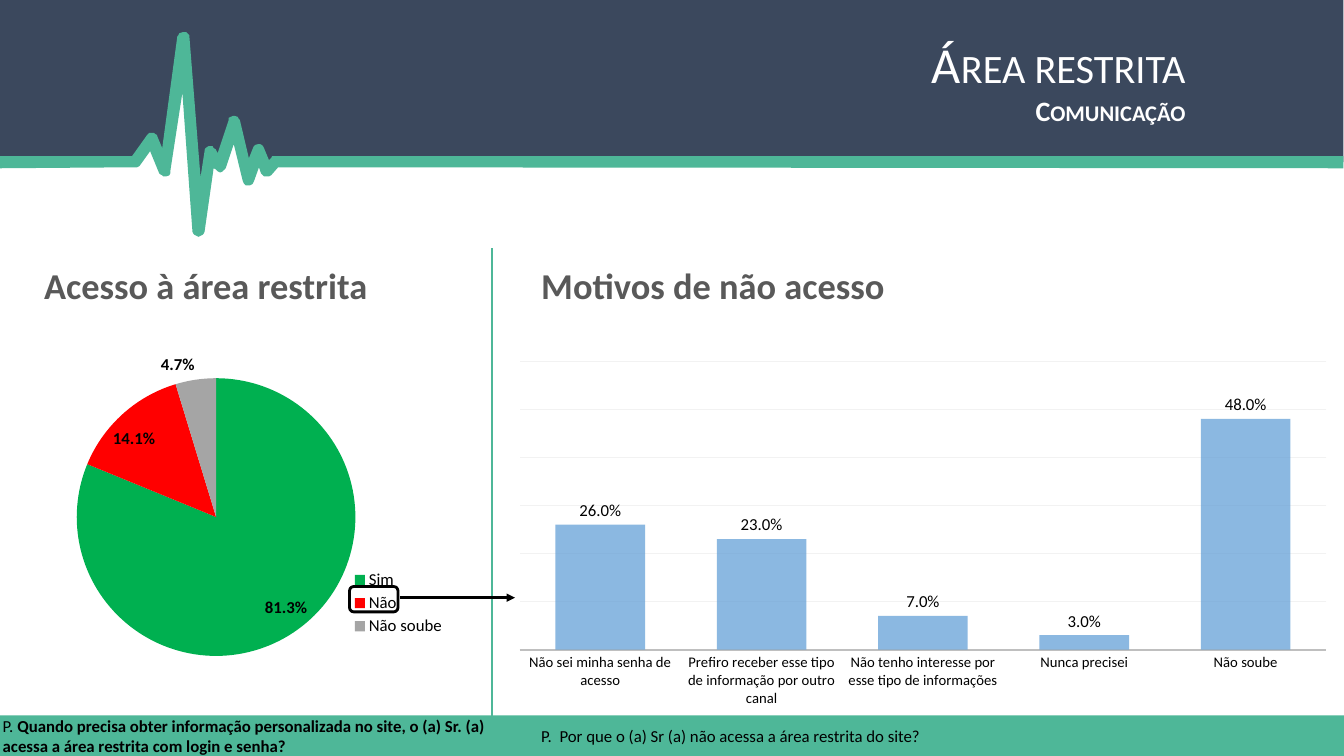
"""Build the survey slide about access to the restricted area."""
from dataclasses import dataclass

from pptx import Presentation
from pptx.chart.data import CategoryChartData
from pptx.dml.color import RGBColor
from pptx.enum import chart as ch, shapes, text
from pptx.oxml import ns, xmlchemy as xc
from pptx.util import Cm, Pt


@dataclass(frozen=True)
class Theme:
    """Colours, font and type sizes of the slide."""
    font: str = "Calibri"
    navy: str = "3B485D"
    green: str = "4EB798"
    white: str = "FFFFFF"
    black: str = "000000"
    grey: str = "595959"
    axis: str = "BFBFBF"
    grid: str = "F2F2F2"
    bar: str = "5B9BD5"
    slices: tuple = ("00B050", "FF0000", "A5A5A5")
    title: float = 36
    subtitle: float = 20
    heading: float = 26
    body: float = 12
    category: float = 10.5


T = Theme()
UNIT = Cm(0.0254)

BAND = [(1333, 0), (0, 0), (0, 161), (134, 160), (152, 141), (162, 167), (181, 74),
        (197, 204), (208, 155), (218, 165), (231, 126), (246, 176), (258, 153),
        (265, 169), (275, 160), (1333, 161)]

PULSE = [(1333, 155), (273, 155), (270, 155), (269, 157), (267, 159), (262, 147),
         (261, 145), (260, 144), (258, 143), (256, 143), (253, 144), (252, 145),
         (251, 147), (247, 157), (238, 119), (237, 118), (236, 116), (233, 115),
         (231, 115), (229, 116), (227, 117), (227, 119), (216, 152), (214, 148),
         (212, 147), (211, 145), (209, 145), (207, 145), (204, 147), (203, 149),
         (203, 150), (199, 176), (188, 37), (188, 35), (186, 33), (185, 32),
         (183, 32), (181, 32), (178, 33), (177, 35), (176, 36), (161, 147),
         (156, 135), (156, 134), (154, 133), (153, 132), (151, 132), (148, 132),
         (147, 133), (146, 134), (131, 155), (0, 155), (0, 167), (134, 166),
         (136, 166), (138, 165), (139, 164), (149, 150), (158, 172), (159, 173),
         (161, 174), (162, 175), (165, 175), (168, 174), (169, 172), (169, 170),
         (181, 92), (191, 230), (192, 232), (193, 233), (195, 234), (197, 235),
         (199, 234), (201, 233), (202, 232), (203, 230), (212, 167), (214, 168),
         (216, 170), (218, 171), (219, 171), (221, 170), (222, 169), (223, 168),
         (224, 167), (232, 143), (241, 180), (242, 182), (243, 183), (244, 184),
         (246, 184), (248, 184), (250, 183), (251, 182), (252, 180), (257, 166),
         (259, 172), (260, 173), (261, 174), (262, 175), (264, 175), (267, 175),
         (269, 174), (276, 166), (1333, 167)]


def rgb(color):
    """Turn a hex string into a colour."""
    return RGBColor.from_string(color)


def style(font, size, color=T.black, bold=False):
    """Set the font, size, colour and weight."""
    font.name, font.size, font.bold = T.font, Pt(size), bold
    font.color.rgb = rgb(color)


def paint(sp, color):
    """Fill a shape and take away its outline and shadow."""
    sp.fill.solid()
    sp.fill.fore_color.rgb = rgb(color)
    sp.line.fill.background()
    sp.shadow.inherit = False


def add_outline(s, points, color):
    """Draw a closed filled outline."""
    builder = s.shapes.build_freeform(*points[0], scale=UNIT)
    builder.add_line_segments(points[1:], close=True)
    paint(builder.convert_to_shape(), color)


def add_text(s, box, runs, size, color=T.black):
    """Add a one-paragraph text box of (text, bold) runs."""
    tf = s.shapes.add_textbox(*map(Cm, box)).text_frame
    tf.word_wrap = True
    for content, bold in runs:
        r = tf.paragraphs[0].add_run()
        r.text = content
        style(r.font, size, color, bold)


def add_line(s, start, end, color, width, arrow=False):
    """Draw a straight line, with an arrowhead if asked."""
    line = s.shapes.add_connector(shapes.MSO_CONNECTOR.STRAIGHT, *map(Cm, start + end))
    line.line.color.rgb = rgb(color)
    line.line.width = Pt(width)
    if arrow:
        line.line._get_or_add_ln().append(xc.OxmlElement("a:tailEnd"))
        line.line._get_or_add_ln()[-1].set("type", "triangle")
    line.element.spPr.append(xc.OxmlElement("a:effectLst"))


def place(node, index, x, y, w, h, inner=False):
    """Give a plot area or legend a manual layout in chart fractions."""
    old = node.find(ns.qn("c:layout"))
    if old is not None:
        node.remove(old)
    layout, manual = xc.OxmlElement("c:layout"), xc.OxmlElement("c:manualLayout")
    layout.append(manual)
    values = {"layoutTarget": "inner"} if inner else {}
    values |= {"xMode": "edge", "yMode": "edge", "x": x, "y": y, "w": w, "h": h}
    for tag, value in values.items():
        item = xc.OxmlElement(f"c:{tag}")
        item.set("val", str(value))
        manual.append(item)
    node.insert(index, layout)


def add_chart(s, kind, box, values, plot_box, label_pos, bold=False):
    """Add a one-series percentage chart with value labels."""
    data = CategoryChartData(number_format="0.0%")
    data.categories = list(values)
    data.add_series("Series 1", list(values.values()))
    chart = s.shapes.add_chart(kind, *map(Cm, box), data).chart
    chart.has_title = chart.has_legend = False
    style(chart.font, 10)
    place(chart._chartSpace.chart.plotArea, 0, *plot_box, inner=True)
    plot = chart.plots[0]
    plot.has_data_labels = True
    labels = plot.data_labels
    labels.show_value, labels.position = True, label_pos
    labels.number_format, labels.number_format_is_linked = "0.0%", False
    style(labels.font, T.body, bold=bold)
    return chart


def add_access_pie(s):
    """Add the pie of access to the restricted area."""
    values = {"Sim": 0.813, "Não": 0.141, "Não soube": 0.047}
    chart = add_chart(s, ch.XL_CHART_TYPE.PIE, (-0.33, 8.92, 13.92, 8.36), values,
                      (0.11, 0.07, 0.61, 0.84), ch.XL_LABEL_POSITION.BEST_FIT, True)
    for i, color in enumerate(T.slices):
        fill = chart.plots[0].series[0].points[i].format.fill
        fill.solid()
        fill.fore_color.rgb = rgb(color)
    chart.has_legend = True
    chart.legend.position = ch.XL_LEGEND_POSITION.RIGHT
    chart.legend.include_in_layout = False
    style(chart.legend.font, T.body)
    place(chart.legend._element, 1, 0.64, 0.64, 0.21, 0.22)


def add_reasons_columns(s):
    """Add the columns of reasons for not accessing."""
    values = {"Não sei minha senha de acesso": 0.26,
              "Prefiro receber esse tipo de informação por outro canal": 0.23,
              "Não tenho interesse por esse tipo de informações": 0.07,
              "Nunca precisei": 0.03, "Não soube": 0.48}
    chart = add_chart(s, ch.XL_CHART_TYPE.COLUMN_CLUSTERED, (12.67, 8.92, 21.18, 9.09),
                      values, (0.02, 0.02, 0.96, 0.8), ch.XL_LABEL_POSITION.OUTSIDE_END)
    plot = chart.plots[0]
    plot.gap_width, plot.overlap, plot.vary_by_categories = 80, 25, False
    fill = plot.series[0].format.fill
    fill.solid()
    fill.fore_color.rgb = rgb(T.bar)
    alpha = xc.OxmlElement("a:alpha")
    alpha.set("val", "70000")
    fill._xPr.find(".//" + ns.qn("a:srgbClr")).append(alpha)
    cat, val = chart.category_axis, chart.value_axis
    cat.major_tick_mark = ch.XL_TICK_MARK.NONE
    style(cat.tick_labels.font, T.category)
    val.minimum_scale, val.maximum_scale, val.major_unit = 0, 0.6, 0.1
    val.has_major_gridlines, val.visible = True, False
    for line, color, width in ((cat.format.line, T.axis, 1.25),
                               (val.major_gridlines.format.line, T.grid, 0.75)):
        line.color.rgb = rgb(color)
        line.width = Pt(width)


def add_title(s):
    """Fill the title placeholder and bring it above the band."""
    sp = s.shapes.title
    sp.left, sp.top, sp.width, sp.height = map(Cm, (6.25, 0.71, 23.88, 2.64))
    tf = sp.text_frame
    tf.text = "Área restrita\nComunicação"
    tf.vertical_anchor = text.MSO_ANCHOR.TOP
    tf.auto_size = text.MSO_AUTO_SIZE.NONE
    for p, size, bold in zip(tf.paragraphs, (T.title, T.subtitle), (False, True)):
        p.alignment = text.PP_ALIGN.RIGHT
        style(p.runs[0].font, size, T.white, bold)
        p.runs[0].font._element.set("cap", "small")
    s.shapes.element.append(sp.element)


def main():
    """Build and save the slide."""
    prs = Presentation()
    prs.slide_width, prs.slide_height = Cm(33.87), Cm(19.05)
    s = prs.slides.add_slide(prs.slide_layouts[5])
    add_outline(s, BAND, T.navy)
    add_outline(s, PULSE, T.green)
    add_access_pie(s)
    footer = s.shapes.add_shape(shapes.MSO_SHAPE.RECTANGLE, *map(Cm, (0, 18.03, 33.87, 1.02)))
    paint(footer, T.green)
    add_title(s)
    question = ("Quando precisa obter informação personalizada no site, o (a) Sr. (a) "
                "acessa a área restrita com login e senha?")
    add_text(s, (-0.18, 17.91, 13.59, 1.27), [("P. ", False), (question, True)], T.body)
    add_text(s, (13.39, 18.16, 16.15, 0.76),
             [("P.  Por que o (a) Sr (a) não acessa a área restrita do site?", False)], T.body)
    for x, heading in ((0.86, "Acesso à área restrita"), (13.39, "Motivos de não acesso")):
        add_text(s, (x, 6.5, 11.56, 1.37), [(heading, True)], T.heading, T.grey)
    add_line(s, (12.4, 6.25), (12.4, 18.16), T.green, 1)
    frame = s.shapes.add_shape(shapes.MSO_SHAPE.ROUNDED_RECTANGLE,
                               *map(Cm, (8.81, 14.78, 1.22, 0.64)))
    frame.fill.background()
    frame.line.color.rgb, frame.line.width = rgb(T.black), Pt(2)
    frame.shadow.inherit = False
    add_line(s, (10.08, 15.06), (12.98, 15.06), T.black, 2, arrow=True)
    add_reasons_columns(s)
    prs.save("out.pptx")


if __name__ == "__main__":
    main()
